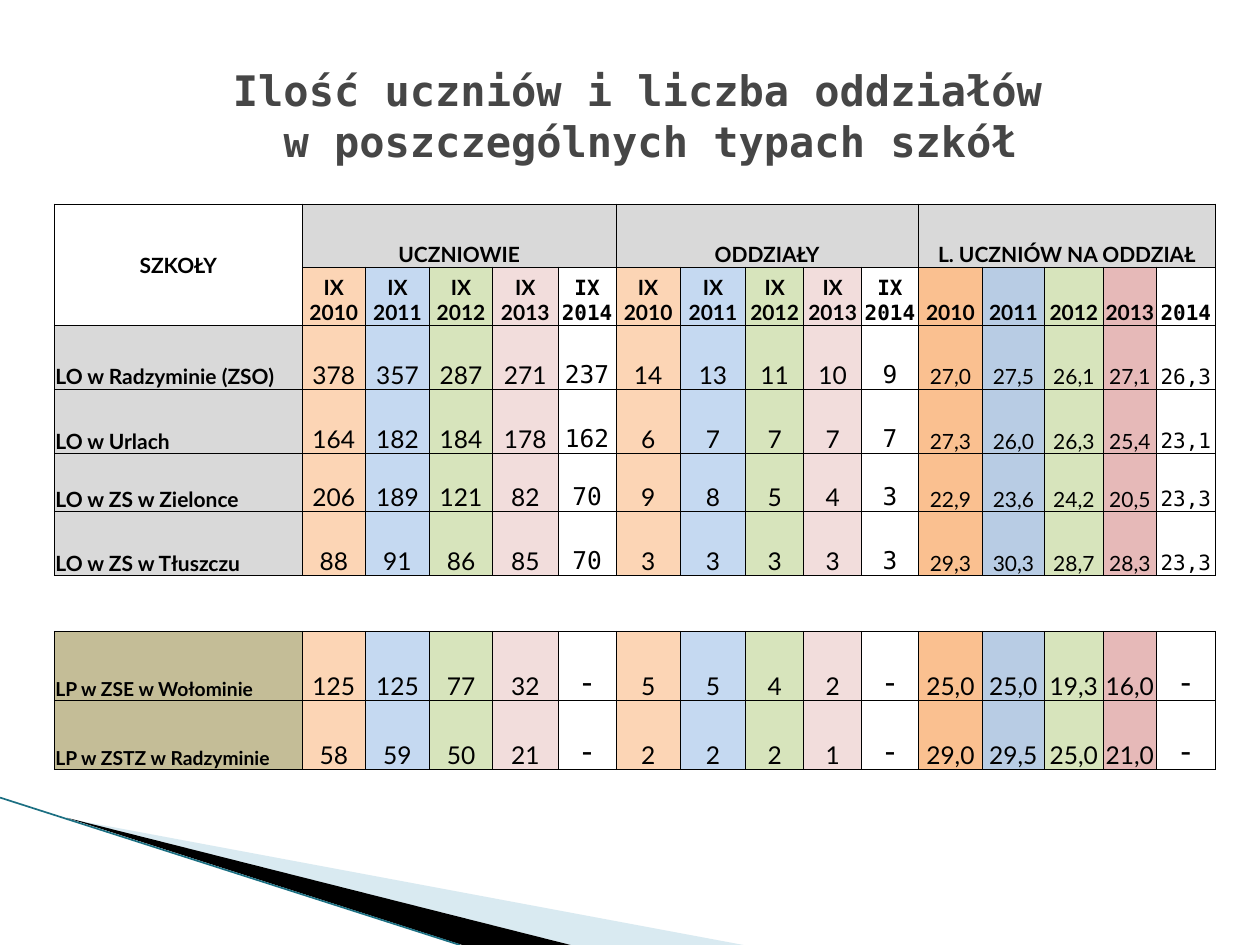
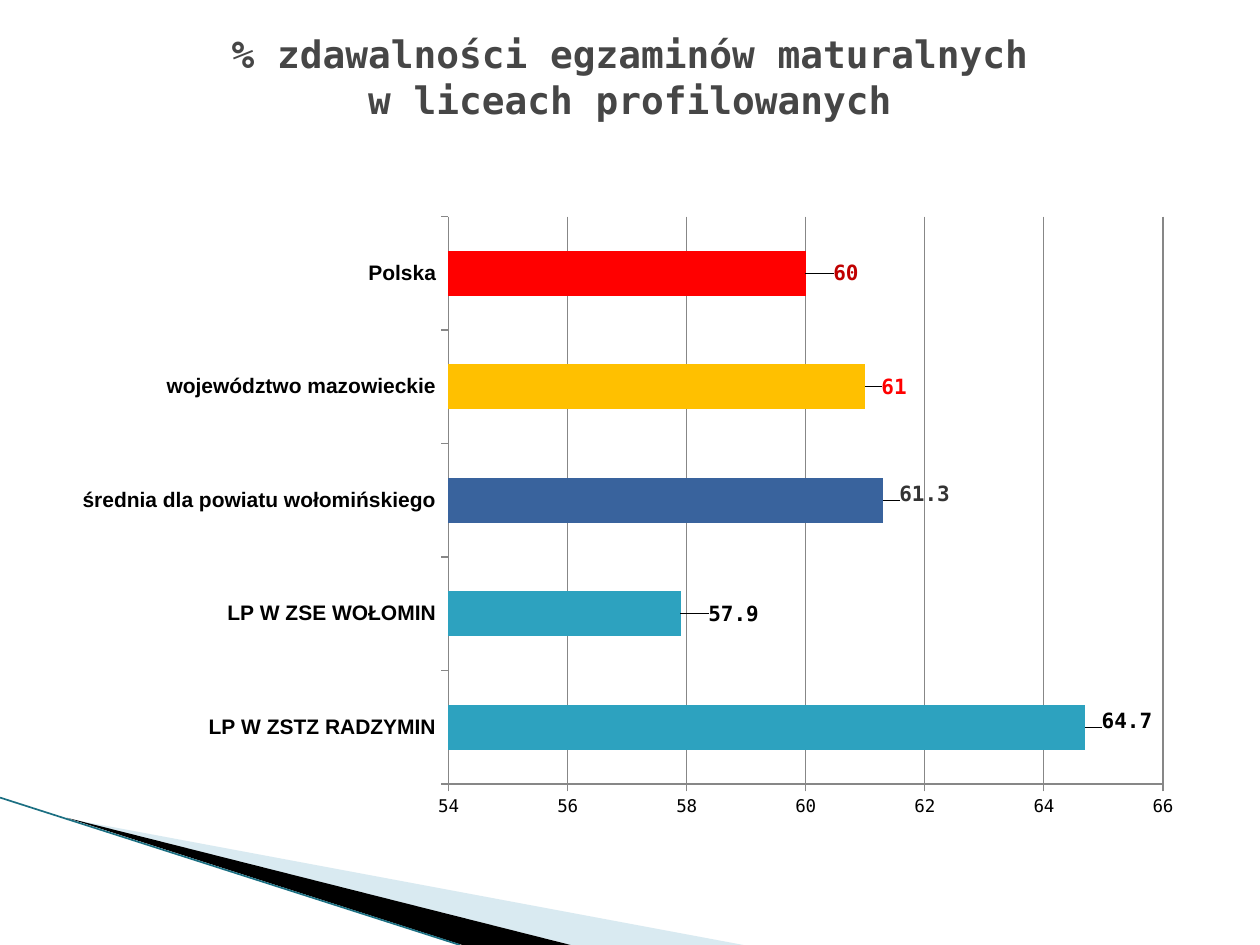
"""Build two slides on pupils, classes and exam pass rates in Polish schools."""
import lxml.etree
import pptx
import pptx.chart.data
import pptx.dml.color
import pptx.enum.chart
import pptx.enum.shapes
import pptx.enum.text
import pptx.oxml.ns
import pptx.util

Inches = pptx.util.Inches
Pt = pptx.util.Pt
qn = pptx.oxml.ns.qn
SubElement = lxml.etree.SubElement
ALIGN = pptx.enum.text.PP_ALIGN
ANCHOR = pptx.enum.text.MSO_ANCHOR
MONO = "DejaVu Sans Mono"
SANS = "Lato"
BLACK = "000000"
TITLE_COLOR = "464646"
GRID_COLOR = "878787"


def color(hex_string):
    """Turn a hex string into a colour."""
    return pptx.dml.color.RGBColor.from_string(hex_string)


def write_text(frame, text, size=12, font=SANS, fill=BLACK, bold=False, align=ALIGN.CENTER):
    """Fill a text frame with one formatted paragraph."""
    frame.word_wrap = True
    paragraph = frame.paragraphs[0]
    paragraph.text = text
    paragraph.alignment = align
    for run in paragraph.runs:
        run.font.size = Pt(size)
        run.font.name = font
        run.font.bold = bold
        run.font.color.rgb = color(fill)


presentation = pptx.Presentation()
presentation.slide_width = Inches(10)
presentation.slide_height = Inches(7.5)

titles = [
    ("Ilość uczniów i liczba oddziałów \vw poszczególnych typach szkół", 24, (0.67, 0.29, 8.98, 1.25)),
    ("% zdawalności egzaminów maturalnych\vw liceach profilowanych", 21.6, (0.5, 0.3, 9, 0.61)),
]
wedges = [
    ([(0.55, 6.5), (5.9, 7.5), (4.53, 7.5)], "A0CBDC", 40),
    ([(0.53, 6.49), (4.53, 7.5), (3.67, 7.5)], BLACK, 100),
]
slides = []
for title, size, box in titles:
    slide = presentation.slides.add_slide(presentation.slide_layouts[6])
    slides.append(slide)
    for points, fill, opacity in wedges:
        corners = [(Inches(x), Inches(y)) for x, y in points]
        builder = slide.shapes.build_freeform(*corners[0])
        builder.add_line_segments(corners[1:])
        wedge = builder.convert_to_shape()
        wedge.shadow.inherit = False
        wedge.fill.solid()
        wedge.fill.fore_color.rgb = color(fill)
        wedge.line.fill.background()
        fill_element = wedge._element.spPr.find(qn("a:solidFill"))[0]
        SubElement(fill_element, qn("a:alpha"), val=str(opacity * 1000))
    edge = slide.shapes.add_connector(
        pptx.enum.shapes.MSO_CONNECTOR.STRAIGHT, 0, Inches(6.33), Inches(3.65), Inches(7.5))
    edge.line.color.rgb = color("1B6F82")
    edge.line.width = Pt(0.95)
    SubElement(edge._element.spPr, qn("a:effectLst"))
    title_box = slide.shapes.add_textbox(*map(Inches, box))
    title_box.text_frame.vertical_anchor = ANCHOR.MIDDLE
    write_text(title_box.text_frame, title, size=size, font=MONO, fill=TITLE_COLOR, bold=True)

table_slide, chart_slide = slides

years = ["2010", "2011", "2012", "2013", "2014"]
school_years = [f"IX {year}" for year in years]
header_rows = [
    ["SZKOŁY", "UCZNIOWIE", "", "", "", "", "ODDZIAŁY", "", "", "", "",
     "L. UCZNIÓW NA ODDZIAŁ", "", "", "", ""],
    [""] + school_years + school_years + years,
]
general_schools = [
    ("LO w Radzyminie (ZSO)", "378 357 287 271 237 14 13 11 10 9 27,0 27,5 26,1 27,1 26,3"),
    ("LO w Urlach", "164 182 184 178 162 6 7 7 7 7 27,3 26,0 26,3 25,4 23,1"),
    ("LO w ZS w Zielonce", "206 189 121 82 70 9 8 5 4 3 22,9 23,6 24,2 20,5 23,3"),
    ("LO w ZS w Tłuszczu", "88 91 86 85 70 3 3 3 3 3 29,3 30,3 28,7 28,3 23,3"),
]
profiled_schools = [
    ("LP w ZSE w Wołominie", "125 125 77 32 - 5 5 4 2 - 25,0 25,0 19,3 16,0 -"),
    ("LP w ZSTZ w Radzyminie", "58 59 50 21 - 2 2 2 1 - 29,0 29,5 25,0 21,0 -"),
]
count_fills = ["FCD5B5", "C5D9F1", "D7E4BC", "F2DDDC", None]
ratio_fills = ["FAC090", "B8CCE4", "D7E4BC", "E6B9B8", None]
column_fills = count_fills * 2 + ratio_fills
column_widths = [1.97, 0.5, 0.51, 0.5, 0.52, 0.46, 0.51, 0.52, 0.46, 0.46, 0.45, 0.51, 0.49, 0.47, 0.42, 0.47]
tables = [
    (1.62, header_rows, general_schools, [0.5, 0.46, 0.51, 0.51, 0.46, 0.51], "D9D9D9", 12, 12),
    (5.01, [], profiled_schools, [0.55, 0.55], "C4BD97", 11, 14),
]
for top, headers, schools, row_heights, name_fill, name_size, ratio_size in tables:
    rows = headers + [[name] + values.split() for name, values in schools]
    table = table_slide.shapes.add_table(
        len(rows), len(column_widths), Inches(0.43), Inches(top),
        Inches(sum(column_widths)), Inches(sum(row_heights))).table
    table.first_row = False
    table.horz_banding = False
    for column, width in zip(table.columns, column_widths):
        column.width = Inches(width)
    for row, height in zip(table.rows, row_heights):
        row.height = Inches(height)
    if headers:
        table.cell(0, 0).merge(table.cell(1, 0))
        for first in (1, 6, 11):
            table.cell(0, first).merge(table.cell(0, first + 4))
    for row_index, row in enumerate(rows):
        is_header = row_index < len(headers)
        for column_index, text in enumerate(row):
            cell = table.cell(row_index, column_index)
            cell.margin_left = cell.margin_right = cell.margin_top = Inches(0.01)
            cell.margin_bottom = 0
            cell.vertical_anchor = ANCHOR.BOTTOM
            align, font, size = ALIGN.CENTER, SANS, 14
            if column_index == 0:
                fill, size = name_fill, name_size
                if is_header:
                    fill = None
                    cell.vertical_anchor = ANCHOR.MIDDLE
                else:
                    align = ALIGN.LEFT
            elif is_header and row_index == 0:
                fill, size = "D9D9D9", 12
            else:
                fill = column_fills[column_index - 1]
                if fill is None:
                    font = MONO
                if text == "-":
                    size = 18
                elif is_header:
                    size = 12
                elif column_index > 10:
                    size = ratio_size
            if fill:
                cell.fill.solid()
                cell.fill.fore_color.rgb = color(fill)
            else:
                cell.fill.background()
            properties = cell._tc.get_or_add_tcPr()
            for position, side in enumerate(("a:lnL", "a:lnR", "a:lnT", "a:lnB")):
                border = lxml.etree.Element(qn(side), w=str(Pt(0.5)))
                SubElement(SubElement(border, qn("a:solidFill")), qn("a:srgbClr"), val=BLACK)
                properties.insert(position, border)
            if text:
                write_text(cell.text_frame, text, size=size, font=font,
                           bold=is_header or column_index == 0, align=align)

pass_rates = [
    ("LP W ZSTZ RADZYMIN", 64.7, "2DA2BF", BLACK, (0.01, -0.01)),
    ("LP W ZSE WOŁOMIN", 57.9, "2DA2BF", BLACK, (0.02, 0)),
    ("średnia dla powiatu wołomińskiego", 61.3, "39639D", "333333", (0.01, -0.01)),
    ("województwo mazowieckie", 61, "FFC000", "FF0000", (0.01, 0)),
    ("Polska", 60, "FF0000", "C00000", (0.02, 0)),
]
chart_data = pptx.chart.data.CategoryChartData()
chart_data.categories = [rate[0] for rate in pass_rates]
chart_data.add_series("Series 1", [rate[1] for rate in pass_rates])
chart = chart_slide.shapes.add_chart(
    pptx.enum.chart.XL_CHART_TYPE.BAR_CLUSTERED,
    Inches(0.5), Inches(1.62), Inches(9), Inches(4.95), chart_data).chart
chart.has_legend = False
chart.has_title = False
chart.font.size = Pt(10)
chart.font.name = MONO
chart.font.color.rgb = color(BLACK)

category_axis, value_axis = chart.category_axis, chart.value_axis
category_axis.tick_labels.font.size = Pt(12)
category_axis.tick_labels.font.bold = True
category_axis.tick_labels.font.name = "Arial"
category_axis.has_major_gridlines = False
value_axis.minimum_scale = 54
value_axis.maximum_scale = 66
value_axis.major_unit = 2
value_axis.has_major_gridlines = True
for axis in (category_axis, value_axis):
    axis.major_tick_mark = pptx.enum.chart.XL_TICK_MARK.OUTSIDE
for line in (category_axis.format.line, value_axis.format.line, value_axis.major_gridlines.format.line):
    line.color.rgb = color(GRID_COLOR)
    line.width = Pt(0.75)

plot = chart.plots[0]
plot.gap_width = 150
plot.vary_by_categories = False
series = plot.series[0]
series.format.fill.solid()
series.format.fill.fore_color.rgb = color("2DA2BF")
for index, (category, value, bar_fill, label_fill, offset) in enumerate(pass_rates):
    point = series.points[index]
    point.format.fill.solid()
    point.format.fill.fore_color.rgb = color(bar_fill)
    label = point.data_label
    label.font.size = Pt(12)
    label.font.bold = True
    label.font.name = MONO
    label.font.color.rgb = color(label_fill)
    label.position = pptx.enum.chart.XL_LABEL_POSITION.OUTSIDE_END
    layout = lxml.etree.Element(qn("c:layout"))
    manual = SubElement(layout, qn("c:manualLayout"))
    for axis_name, shift in zip("xy", offset):
        SubElement(manual, qn(f"c:{axis_name}"), val=str(shift))
    series._element.findall(".//" + qn("c:dLbl"))[index].insert(1, layout)

plot_area = chart._chartSpace.chart.plotArea
for old_layout in plot_area.findall(qn("c:layout")):
    plot_area.remove(old_layout)
plot_layout = lxml.etree.Element(qn("c:layout"))
manual = SubElement(plot_layout, qn("c:manualLayout"))
for name, setting in [("layoutTarget", "inner"), ("xMode", "edge"), ("yMode", "edge"),
                      ("x", "0.34"), ("y", "0.02"), ("w", "0.63"), ("h", "0.91")]:
    SubElement(manual, qn(f"c:{name}"), val=setting)
plot_area.insert(0, plot_layout)

presentation.save("out.pptx")
